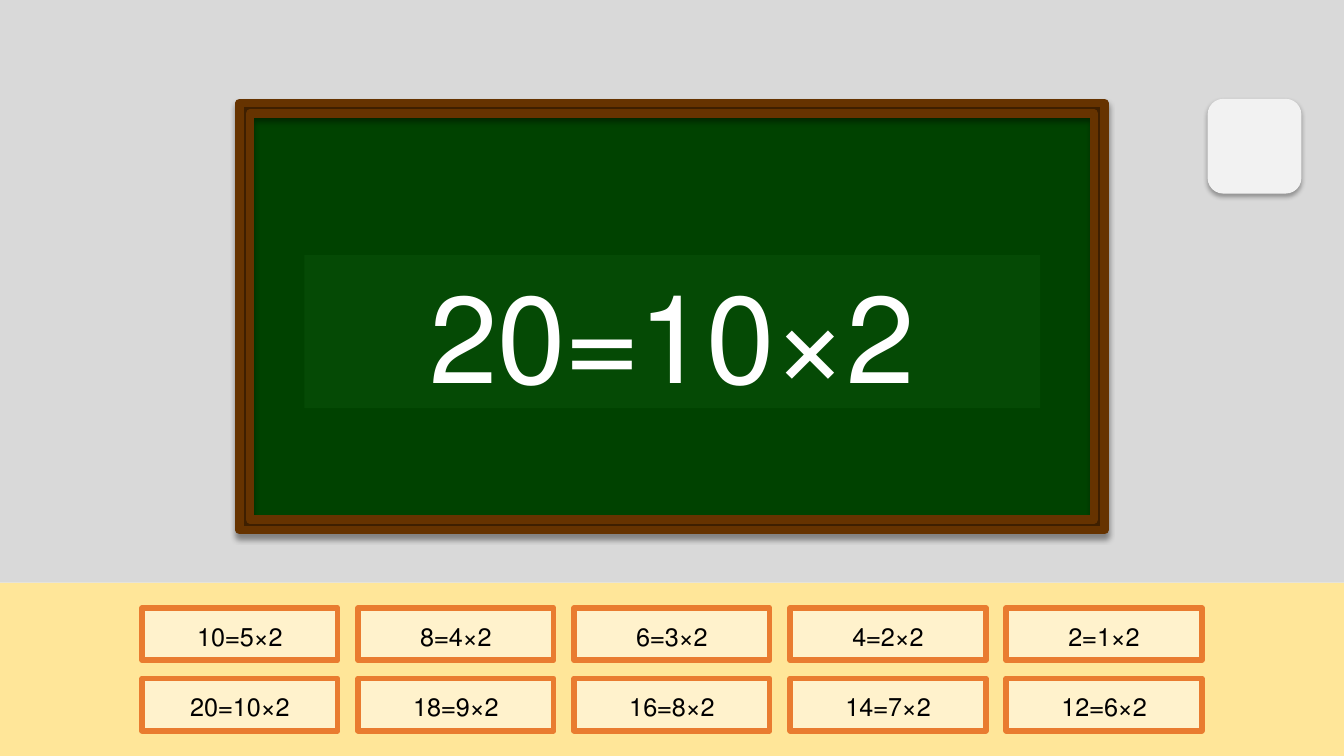
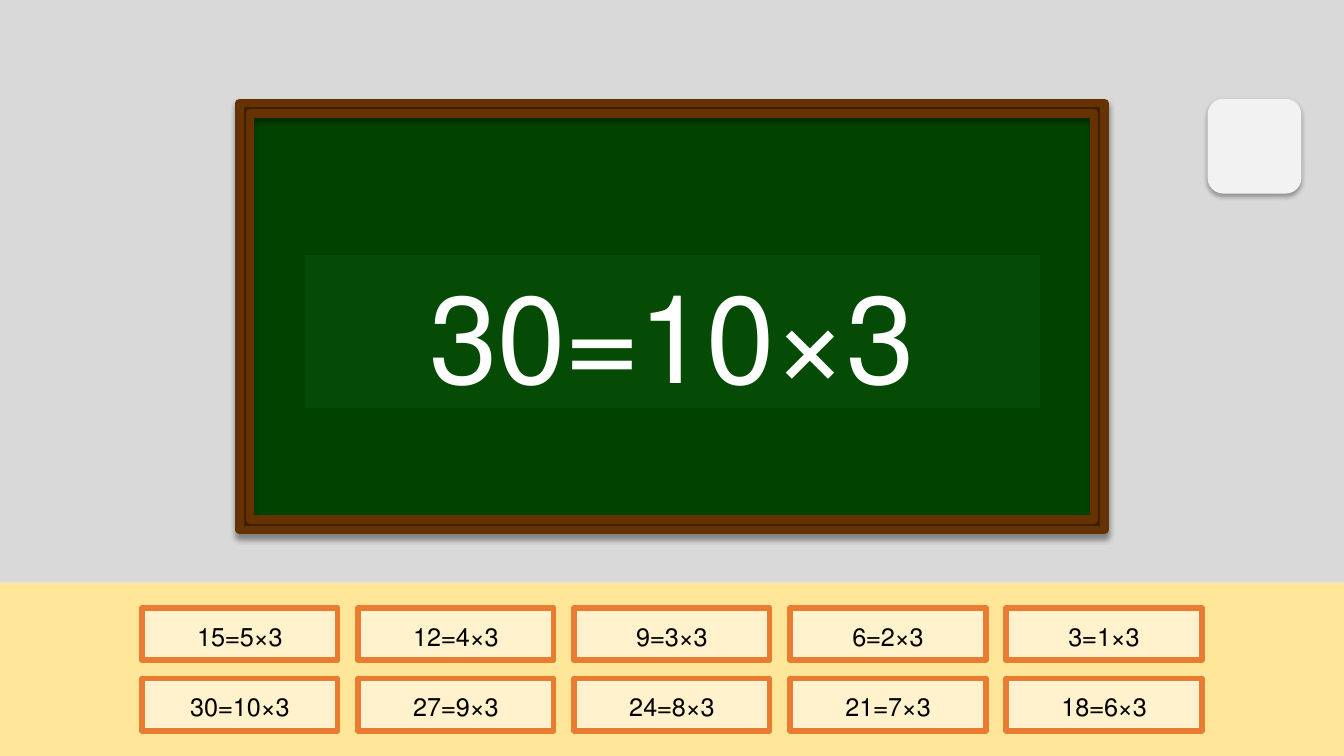
"""Build the multiplication blackboard slides."""
from dataclasses import dataclass

from lxml import etree
from pptx import Presentation
from pptx.dml.color import RGBColor
from pptx.enum.shapes import MSO_SHAPE
from pptx.enum.text import MSO_ANCHOR, PP_ALIGN
from pptx.oxml.ns import qn
from pptx.util import Pt

RECTANGLE = MSO_SHAPE.RECTANGLE
ROUNDED = MSO_SHAPE.ROUNDED_RECTANGLE
MIDDLE = MSO_ANCHOR.MIDDLE
CENTER = PP_ALIGN.CENTER
SLIDE_WIDTH, SLIDE_HEIGHT = 960, 540
WALL_HEIGHT = 416.2
BLEED = 4.2
BOARD = (178.7, 81, 602.6, 290.2)
FRAME_BAR = 7.5
TILE = (862.6, 70.6, 67, 67.7)
ANSWER = (217.4, 182.2, 525.6, 109.4)
CARD_WIDTH, CARD_HEIGHT, CARDS_TOP = 139.7, 37.4, 434.2
COLUMN_GAP, ROW_GAP = 14.6, 13
COLUMNS, FACTORS = 5, 10


@dataclass(frozen=True)
class Theme:
    """Colours, type sizes and line widths of the deck."""
    font: str = "Calibri"
    wall: str = "D9D9D9"
    floor: str = "FFE699"
    board: str = "004200"
    frame: str = "3E1F00"
    frame_line: str = "663300"
    tile: str = "F2F2F2"
    card: str = "FFF2CC"
    card_line: str = "E97C30"
    card_text: str = "000000"
    answer: str = "054A05"
    answer_text: str = "FFFFFF"
    shadow: str = "000000"
    card_size: float = 18
    answer_size: float = 88
    frame_width: float = 6
    card_line_width: float = 4


THEME = Theme()


def paint(shape, fill, line=None, width=0):
    """Set fill and outline, and switch off the default shadow."""
    shape.shadow.inherit = False
    shape.fill.solid()
    shape.fill.fore_color.rgb = RGBColor.from_string(fill)
    if line:
        shape.line.color.rgb = RGBColor.from_string(line)
        shape.line.width = Pt(width)
    else:
        shape.line.fill.background()


def add_shadow(shape, opacity, blur, distance):
    """Drop a soft shadow straight down from a painted shape."""
    effects = shape.element.spPr.find(qn("a:effectLst"))
    outer = etree.SubElement(effects, qn("a:outerShdw"), {
        "blurRad": str(Pt(blur)), "dist": str(Pt(distance)),
        "dir": "5400000", "algn": "t", "rotWithShape": "0"})
    color = etree.SubElement(outer, qn("a:srgbClr"), val=THEME.shadow)
    etree.SubElement(color, qn("a:alpha"), val=str(opacity * 1000))


def add_box(page, area, fill, line=None, width=0, kind=RECTANGLE):
    """Add a painted preset shape."""
    box = page.shapes.add_shape(kind, *map(Pt, area))
    paint(box, fill, line, width)
    return box


def outline(area, grow=0):
    """Return the clockwise corners of an area grown on every side."""
    left, top, width, height = area
    right, bottom = left + width + grow, top + height + grow
    left, top = left - grow, top - grow
    corners = [(left, top), (right, top), (right, bottom), (left, bottom)]
    return [(Pt(x), Pt(y)) for x, y in corners]


def add_outlines(page, contours, fill):
    """Add a freeform with the frame's line from closed contours."""
    builder = page.shapes.build_freeform(*contours[0][0])
    for number, contour in enumerate(contours):
        if number:
            builder.move_to(*contour[0])
        builder.add_line_segments(contour[1:], close=True)
    shape = builder.convert_to_shape()
    paint(shape, fill, THEME.frame_line, THEME.frame_width)
    return shape


def write_equation(box, text, size, color):
    """Write one centred right-to-left equation in a box."""
    frame = box.text_frame
    frame_format = {
        "word_wrap": True, "vertical_anchor": MIDDLE,
        "margin_left": Pt(28), "margin_top": Pt(31),
        "margin_right": Pt(28), "margin_bottom": Pt(28)}
    for name, value in frame_format.items():
        setattr(frame, name, value)
    para = frame.paragraphs[0]
    para.alignment = CENTER
    para._p.get_or_add_pPr().set("rtl", "1")
    span = para.add_run()
    span.text = text
    for name, value in {"name": THEME.font, "size": Pt(size)}.items():
        setattr(span.font, name, value)
    span.font.color.rgb = RGBColor.from_string(color)


def add_backdrop(page, layout):
    """Draw the classroom once and move it to the shared layout."""
    for placeholder in list(layout.placeholders):
        layout.shapes.element.remove(placeholder.element)
    band_width = SLIDE_WIDTH + 2 * BLEED
    add_box(page, (-BLEED, WALL_HEIGHT, band_width, SLIDE_HEIGHT - WALL_HEIGHT), THEME.floor)
    add_box(page, (-BLEED, 0, band_width, WALL_HEIGHT), THEME.wall)
    inner = outline(BOARD)
    add_outlines(page, [inner], THEME.board)
    hole = inner[:1] + inner[:0:-1]
    frame = add_outlines(page, [outline(BOARD, FRAME_BAR), hole], THEME.frame)
    add_shadow(frame, 40, 4, 3)
    tile = add_box(page, TILE, THEME.tile, kind=ROUNDED)
    add_shadow(tile, 32, 3.5, 2.2)
    for shape in list(page.shapes):
        layout.shapes.element.append(shape.element)


def add_times_table(page, number):
    """Add the equation cards from right to left, and the last on the board."""
    pitch = CARD_WIDTH + COLUMN_GAP
    last_left = (SLIDE_WIDTH + COLUMNS * pitch - COLUMN_GAP) / 2 - CARD_WIDTH
    equations = [f"{number}×{factor}={number * factor}" for factor in range(1, FACTORS + 1)]
    for index, equation in enumerate(equations):
        row, column = divmod(index, COLUMNS)
        area = (last_left - column * pitch, CARDS_TOP + row * (CARD_HEIGHT + ROW_GAP),
                CARD_WIDTH, CARD_HEIGHT)
        card = add_box(page, area, THEME.card, THEME.card_line, THEME.card_line_width)
        write_equation(card, equation, THEME.card_size, THEME.card_text)
    answer = add_box(page, ANSWER, THEME.answer)
    write_equation(answer, equations[-1], THEME.answer_size, THEME.answer_text)


def main():
    """Build and save the deck."""
    deck = Presentation()
    deck.slide_width, deck.slide_height = Pt(SLIDE_WIDTH), Pt(SLIDE_HEIGHT)
    blank = deck.slide_layouts[6]
    pages = {number: deck.slides.add_slide(blank) for number in (2, 3)}
    add_backdrop(pages[2], blank)
    for number, page in pages.items():
        add_times_table(page, number)
    deck.save("out.pptx")


if __name__ == "__main__":
    main()
